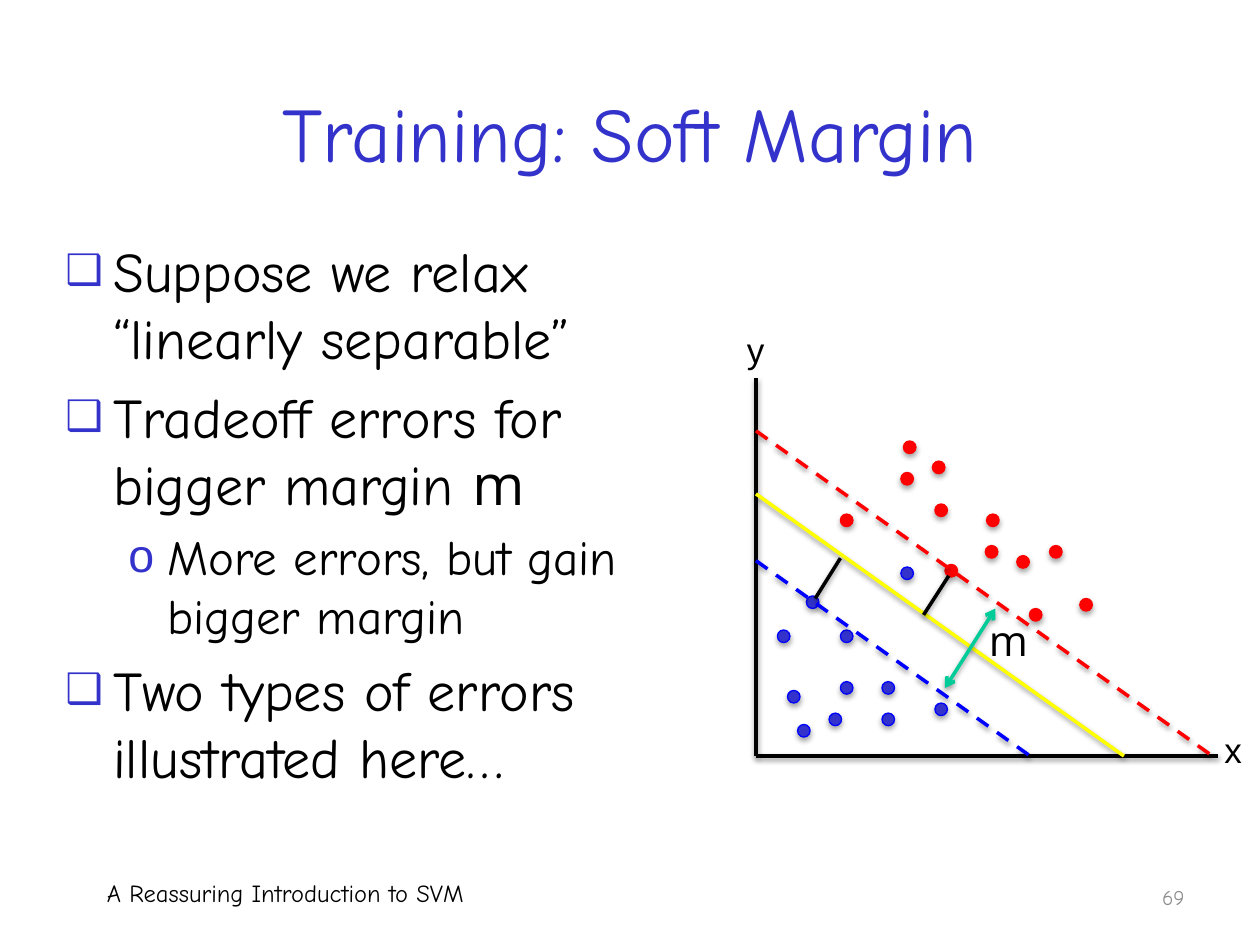
from dataclasses import dataclass

from lxml import etree
from pptx import Presentation
from pptx.dml.color import RGBColor
from pptx.enum.dml import MSO_LINE
from pptx.enum.shapes import MSO_CONNECTOR, MSO_SHAPE
from pptx.enum.text import MSO_ANCHOR, PP_ALIGN
from pptx.oxml import parse_xml
from pptx.oxml.ns import nsdecls, qn
from pptx.util import Inches, Pt

STRAIGHT = MSO_CONNECTOR.STRAIGHT
OVAL = MSO_SHAPE.OVAL
DASH = MSO_LINE.DASH
TOP, MIDDLE = MSO_ANCHOR.TOP, MSO_ANCHOR.MIDDLE
LEFT, CENTER, RIGHT = PP_ALIGN.LEFT, PP_ALIGN.CENTER, PP_ALIGN.RIGHT


@dataclass(frozen=True)
class Theme:
    """Fonts, colours and sizes of the slide."""
    hand: str = "Comic Neue"
    plain: str = "Open Sans"
    label: str = "Arial"
    accent: str = "3333CC"
    black: str = "000000"
    gray: str = "8C8C8C"
    red: str = "FF0000"
    blue: str = "0000FF"
    yellow: str = "FFFF00"
    green: str = "00CC99"
    title: int = 44
    body: int = 32
    sub: int = 28
    symbol: int = 24
    axis: int = 20
    footer: int = 14
    number: int = 12
    line: float = 2
    outline: float = 0.75
    dot: float = 0.1


THEME = Theme()

BULLETS = [
    (0, ["Suppose we relax “linearly separable”"]),
    (0, ["Tradeoff errors for bigger margin ", "m"]),
    (1, ["More errors, but gain bigger margin"]),
    (0, ["Two types of errors illustrated here…"]),
]
LEVELS = [
    ("❑", 75, 0.38, 0.38, THEME.body),
    ("o", 95, 0.81, 0.31, THEME.sub),
]
RED_DOTS = [
    (1.4, 0.66), (1.17, 0.5), (1.15, 0.75), (1.5, 1.48), (1.42, 1), (1.82, 1.33),
    (1.83, 1.08), (2.07, 1.41), (2.33, 1.33), (2.57, 1.75), (2.17, 1.83), (0.67, 1.08),
]
BLUE_DOTS = [
    (0.17, 2), (0.25, 2.48), (0.67, 2), (0.67, 2.41), (0.58, 2.66), (1, 2.41),
    (1, 2.66), (1.42, 2.58), (0.33, 2.75), (0.4, 1.73), (1.15, 1.5),
]


def style_run(run, font, size, color):
    """Set the font, size and colour of a run."""
    run.font.name = font
    run.font.size = Pt(size)
    run.font.color.rgb = RGBColor.from_string(color)


def add_text(slide, box, text, font, size, color, align=LEFT, anchor=TOP, wrap=True):
    """Add one line of text in a box."""
    shape = slide.shapes.add_textbox(*map(Inches, box))
    frame = shape.text_frame
    frame.word_wrap = wrap
    frame.vertical_anchor = anchor
    frame.text = text
    frame.paragraphs[0].alignment = align
    style_run(frame.paragraphs[0].runs[0], font, size, color)


def add_shadow(shape, opacity, distance):
    """Give a shape or connector a soft shadow below it."""
    properties = shape.element.spPr
    for effects in properties.findall(qn("a:effectLst")):
        properties.remove(effects)
    properties.append(parse_xml(
        f'<a:effectLst {nsdecls("a")}><a:outerShdw blurRad="{Pt(3.1)}" dist="{Pt(distance)}" '
        f'dir="5400000" rotWithShape="0"><a:srgbClr val="{THEME.black}">'
        f'<a:alpha val="{opacity * 1000}"/></a:srgbClr></a:outerShdw></a:effectLst>'))


def add_line(slide, box, start, end, color, dashed=False, arrows=False):
    """Draw a line between two points measured from the box corner."""
    left, top = box[:2]
    ends = (left + start[0], top + start[1], left + end[0], top + end[1])
    connector = slide.shapes.add_connector(STRAIGHT, *map(Inches, ends))
    connector.line.color.rgb = RGBColor.from_string(color)
    connector.line.width = Pt(THEME.line)
    if dashed:
        connector.line.dash_style = DASH
    if arrows:
        outline = connector.element.spPr.find(qn("a:ln"))
        for tag in ("a:headEnd", "a:tailEnd"):
            etree.SubElement(outline, qn(tag), type="arrow")
    add_shadow(connector, 38, 1.6)


def add_dots(slide, box, points, fill, outline):
    """Draw one class of data points measured from the box corner."""
    for x, y in points:
        place = (box[0] + x, box[1] + y, THEME.dot, THEME.dot)
        dot = slide.shapes.add_shape(OVAL, *map(Inches, place))
        dot.fill.solid()
        dot.fill.fore_color.rgb = RGBColor.from_string(fill)
        dot.line.color.rgb = RGBColor.from_string(outline)
        dot.line.width = Pt(THEME.outline)
        add_shadow(dot, 35, 1.8)


def set_bullet(paragraph, level):
    """Give a paragraph the bullet, indent and spacing of its level."""
    mark, percent, margin, hanging, _ = LEVELS[level]
    paragraph.level = level
    properties = paragraph._p.get_or_add_pPr()
    properties.set("marL", str(Inches(margin)))
    properties.set("indent", str(-Inches(hanging)))
    for part in (
        '<a:spcBef {}><a:spcPct val="20000"/></a:spcBef>',
        f'<a:buClr {{}}><a:srgbClr val="{THEME.accent}"/></a:buClr>',
        f'<a:buSzPct {{}} val="{percent * 1000}"/>',
        f'<a:buFont {{}} typeface="{THEME.label}"/>',
        f'<a:buChar {{}} char="{mark}"/>',
    ):
        properties.append(parse_xml(part.format(nsdecls("a"))))


def add_bullets(slide, box):
    """Fill the box with the bulleted text."""
    frame = slide.shapes.add_textbox(*map(Inches, box)).text_frame
    frame.word_wrap = True
    for index, (level, pieces) in enumerate(BULLETS):
        paragraph = frame.add_paragraph() if index else frame.paragraphs[0]
        set_bullet(paragraph, level)
        for piece, font in zip(pieces, (THEME.hand, THEME.plain)):
            run = paragraph.add_run()
            run.text = piece
            style_run(run, font, LEVELS[level][-1], THEME.black)


def add_plot(slide, box):
    """Draw the soft margin plot with its axes along the box edges."""
    left, top, width, height = box
    origin = (0, height)
    add_line(slide, box, (0, 0), origin, THEME.black)
    add_line(slide, box, origin, (width, height), THEME.black)
    add_dots(slide, box, RED_DOTS, THEME.red, THEME.red)
    add_dots(slide, box, BLUE_DOTS, THEME.accent, THEME.blue)
    add_line(slide, box, (0, 0.92), (2.92, height), THEME.yellow)
    add_line(slide, box, (0.67, 1.43), (0.47, 1.75), THEME.black)
    add_line(slide, box, (1.53, 1.57), (1.33, 1.88), THEME.black)
    add_line(slide, box, (0, 0.42), (3.65, 3.02), THEME.red, dashed=True)
    add_line(slide, box, (0, 1.45), (2.19, 3.01), THEME.blue, dashed=True)
    add_line(slide, box, (1.9, 1.83), (1.5, 2.46), THEME.green, arrows=True)
    for text, x, y, w, h, font, size in (
        ("x", width - 0.05, height - 0.27, 0.36, 0.44, THEME.label, THEME.axis),
        ("y", -0.17, -0.44, 0.36, 0.44, THEME.label, THEME.axis),
        ("m", 1.75, 1.83, 0.52, 0.5, THEME.plain, THEME.symbol),
    ):
        add_text(slide, (left + x, top + y, w, h), text, font, size, THEME.black, wrap=False)


def main():
    """Build and save the slide."""
    presentation = Presentation()
    presentation.slide_width, presentation.slide_height = Inches(10), Inches(7.5)
    slide = presentation.slides.add_slide(presentation.slide_layouts[6])
    add_text(slide, (0.75, 0.42, 8.5, 1.25), "Training: Soft Margin",
             THEME.hand, THEME.title, THEME.accent, CENTER, MIDDLE)
    add_bullets(slide, (0.42, 1.83, 5, 4.92))
    add_text(slide, (0.75, 6.92, 4.42, 0.42), "A Reassuring Introduction to SVM",
             THEME.hand, THEME.footer, THEME.black)
    add_text(slide, (7.17, 6.92, 2.33, 0.4), "69",
             THEME.hand, THEME.number, THEME.gray, RIGHT, MIDDLE)
    add_plot(slide, (6, 3, 3.67, 3))
    presentation.save("out.pptx")


if __name__ == "__main__":
    main()
